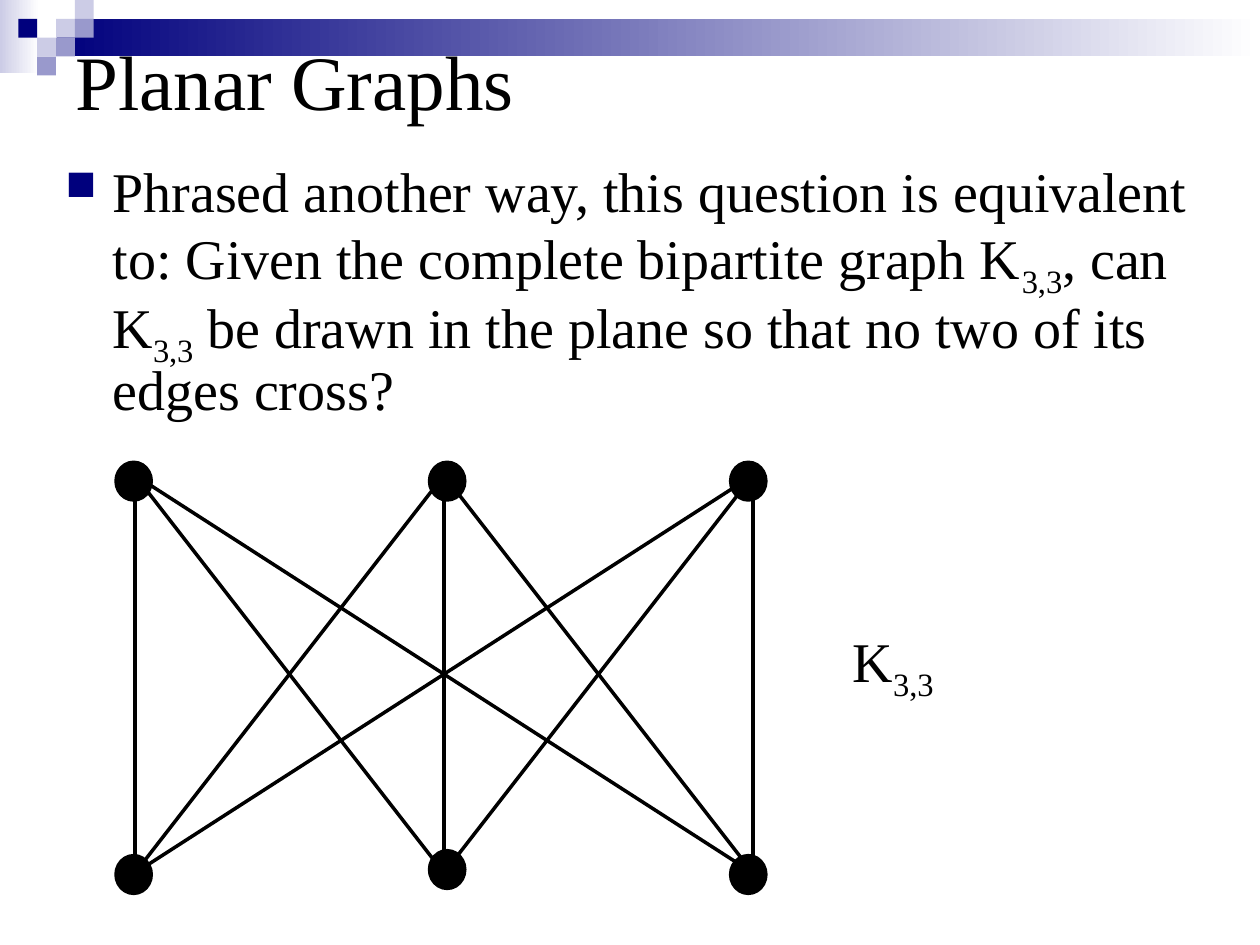
from itertools import product

from lxml.etree import SubElement
from pptx import Presentation
from pptx.dml.color import RGBColor
from pptx.enum.shapes import MSO_CONNECTOR, MSO_SHAPE
from pptx.enum.text import MSO_ANCHOR
from pptx.oxml.ns import qn
from pptx.util import Cm, Pt

BLACK = RGBColor(0x00, 0x00, 0x00)
WHITE = RGBColor(0xFF, 0xFF, 0xFF)
NAVY = RGBColor(0x00, 0x00, 0x7D)
VIOLET = RGBColor(0x99, 0x99, 0xCC)
LAVENDER = RGBColor(0xCC, 0xCC, 0xE6)


def add_plain_shape(kind, left, top, width, height):
    shape = page.shapes.add_shape(kind, Cm(left), Cm(top), Cm(width), Cm(height))
    shape.shadow.inherit = False
    shape.line.fill.background()
    return shape


def add_text(left, top, width, height, size, pieces, before=0):
    """Add one paragraph; every second piece is a subscript, before is in percent."""
    box = page.shapes.add_textbox(Cm(left), Cm(top), Cm(width), Cm(height))
    box.text_frame.word_wrap = True
    para = box.text_frame.paragraphs[0]
    para.font.name = "Times New Roman"
    para.font.size = Pt(size)
    para.font.color.rgb = BLACK
    for index, piece in enumerate(pieces):
        span = para.add_run()
        span.text = piece
        if index % 2:
            span.font._element.set("baseline", "-25000")
    if before:
        para.space_before = Pt(0)
        spacing = para._p.pPr.find(qn("a:spcBef"))
        spacing.clear()
        SubElement(spacing, qn("a:spcPct"), val=str(before * 1000))
    return box.text_frame


deck = Presentation()
deck.slide_width, deck.slide_height = Cm(25.4), Cm(19.05)
page = deck.slides.add_slide(deck.slide_layouts[6])

# Header: two fading bars and a mosaic of small squares
for left, top, width, height, color in [
    (0, 0, 0.79, 1.48, LAVENDER),
    (1.14, 0.38, 24.26, 0.76, NAVY),
]:
    bar = add_plain_shape(MSO_SHAPE.RECTANGLE, left, top, width, height)
    bar.fill.gradient()
    bar.fill.gradient_angle = 0
    for stop, shade in zip(bar.fill.gradient_stops, (color, WHITE)):
        stop.color.rgb = shade

TILE = 0.38
for column, row, color in [
    (2, 1, LAVENDER), (3, 0, LAVENDER), (3, 1, VIOLET), (1, 2, LAVENDER),
    (0, 1, NAVY), (2, 2, VIOLET), (1, 3, VIOLET),
]:
    tile = add_plain_shape(MSO_SHAPE.RECTANGLE, 0.37 + column * TILE, row * TILE, TILE, TILE)
    tile.fill.solid()
    tile.fill.fore_color.rgb = color

# Title and question
title = add_text(1.27, 0.43, 22.86, 2.34, 44, ["Planar Graphs"])
title.vertical_anchor = MSO_ANCHOR.MIDDLE

question = add_text(1.07, 3.18, 23.29, 5.51, 32, [
    "Phrased another way, this question is equivalent to: "
    "Given the complete bipartite graph K", "3,3", ", can K", "3,3",
    " be drawn in the plane so that no two of its edges cross?",
], before=20)
question.paragraphs[0].line_spacing = 0.9
properties = question.paragraphs[0]._p.pPr
properties.set("marL", str(Cm(0.95)))
properties.set("indent", str(Cm(-0.95)))
bullet_color = SubElement(properties, qn("a:buClr"))
SubElement(bullet_color, qn("a:srgbClr"), val=str(NAVY))
SubElement(properties, qn("a:buSzPct"), val="75000")
SubElement(properties, qn("a:buChar"), char="■")
properties.append(properties.find(qn("a:defRPr")))  # the schema wants it last

add_text(16.94, 12.5, 2.74, 1.6, 32, ["K", "3,3"], before=50)

# Complete bipartite graph: every upper vertex joins every lower one
EDGE_COLUMNS = (2.72, 8.95, 15.18)
for upper, lower in product(EDGE_COLUMNS, repeat=2):
    edge = page.shapes.add_connector(
        MSO_CONNECTOR.STRAIGHT, Cm(upper), Cm(9.58), Cm(lower), Cm(17.6))
    edge.line.color.rgb = BLACK
    edge.line.width = Pt(2)
    SubElement(edge._element.spPr, qn("a:effectLst"))

for left, lower_top in [(2.34, 17.25), (8.66, 17.15), (14.73, 17.25)]:
    for top in (9.32, lower_top):
        vertex = add_plain_shape(MSO_SHAPE.OVAL, left, top, 0.71, 0.76)
        vertex.fill.solid()
        vertex.fill.fore_color.rgb = BLACK
        vertex.line.color.rgb = BLACK
        vertex.line.width = Pt(2)

deck.save("out.pptx")
